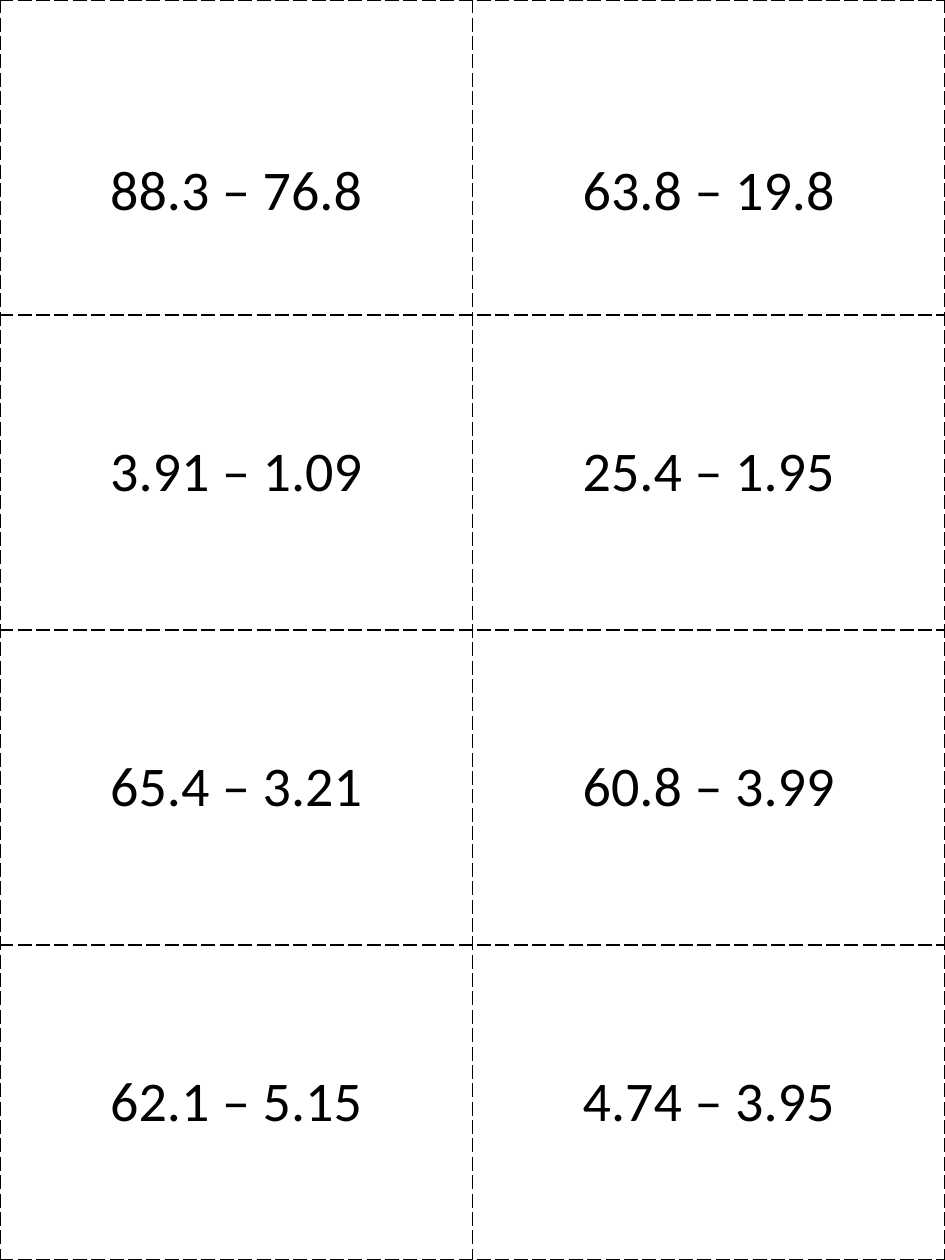
from lxml import etree
from pptx import Presentation
from pptx import util as u
from pptx.dml import color
from pptx.enum import text
from pptx.oxml import ns

COLS, ROWS = 2, 4
INK = "000000"
FONT, SIZE = "Calibri", 32
TOP_ROW_DROP = 0.54
PROBLEMS = [
    ["88.3 – 76.8", "63.8 – 19.8"],
    ["3.91 – 1.09", "25.4 – 1.95"],
    ["65.4 – 3.21", "60.8 – 3.99"],
    ["62.1 – 5.15", "4.74 – 3.95"],
]


def rgb(value):
    return color.RGBColor.from_string(value)


def add_cut_lines(cell):
    tcPr = cell._tc.get_or_add_tcPr()
    for i, side in enumerate(("a:lnL", "a:lnR", "a:lnT", "a:lnB")):
        ln = etree.Element(ns.qn(side), w=str(u.Pt(1)))
        fill = etree.SubElement(ln, ns.qn("a:solidFill"))
        etree.SubElement(fill, ns.qn("a:srgbClr"), val=INK)
        etree.SubElement(ln, ns.qn("a:prstDash"), val="lgDash")
        tcPr.insert(i, ln)


def fill_card(cell, problem, drop):
    cell.fill.background()
    add_cut_lines(cell)
    cell.vertical_anchor = text.MSO_ANCHOR.MIDDLE
    cell.margin_left = cell.margin_right = u.Inches(0.1)
    cell.margin_top = u.Inches(0.05 + drop)
    cell.margin_bottom = u.Inches(0.05)
    p = cell.text_frame.paragraphs[0]
    p.text = problem
    p.alignment = text.PP_ALIGN.CENTER
    f = p.runs[0].font
    f.name, f.size, f.bold = FONT, u.Pt(SIZE), False
    f.color.rgb = rgb(INK)


def add_cards(s, x, y, w, h):
    tbl = s.shapes.add_table(ROWS, COLS, x, y, w, h).table
    tbl.first_row = tbl.horz_banding = False
    for col in tbl.columns:
        col.width = w // COLS
    for row in tbl.rows:
        row.height = h // ROWS
    for i, problems in enumerate(PROBLEMS):
        for j, problem in enumerate(problems):
            fill_card(tbl.cell(i, j), problem, TOP_ROW_DROP if i == 0 else 0)


def main():
    prs = Presentation()
    prs.slide_width, prs.slide_height = u.Inches(7.5), u.Inches(10)
    s = prs.slides.add_slide(prs.slide_layouts[6])
    add_cards(s, 0, 0, prs.slide_width, prs.slide_height)
    prs.save("out.pptx")


if __name__ == "__main__":
    main()
